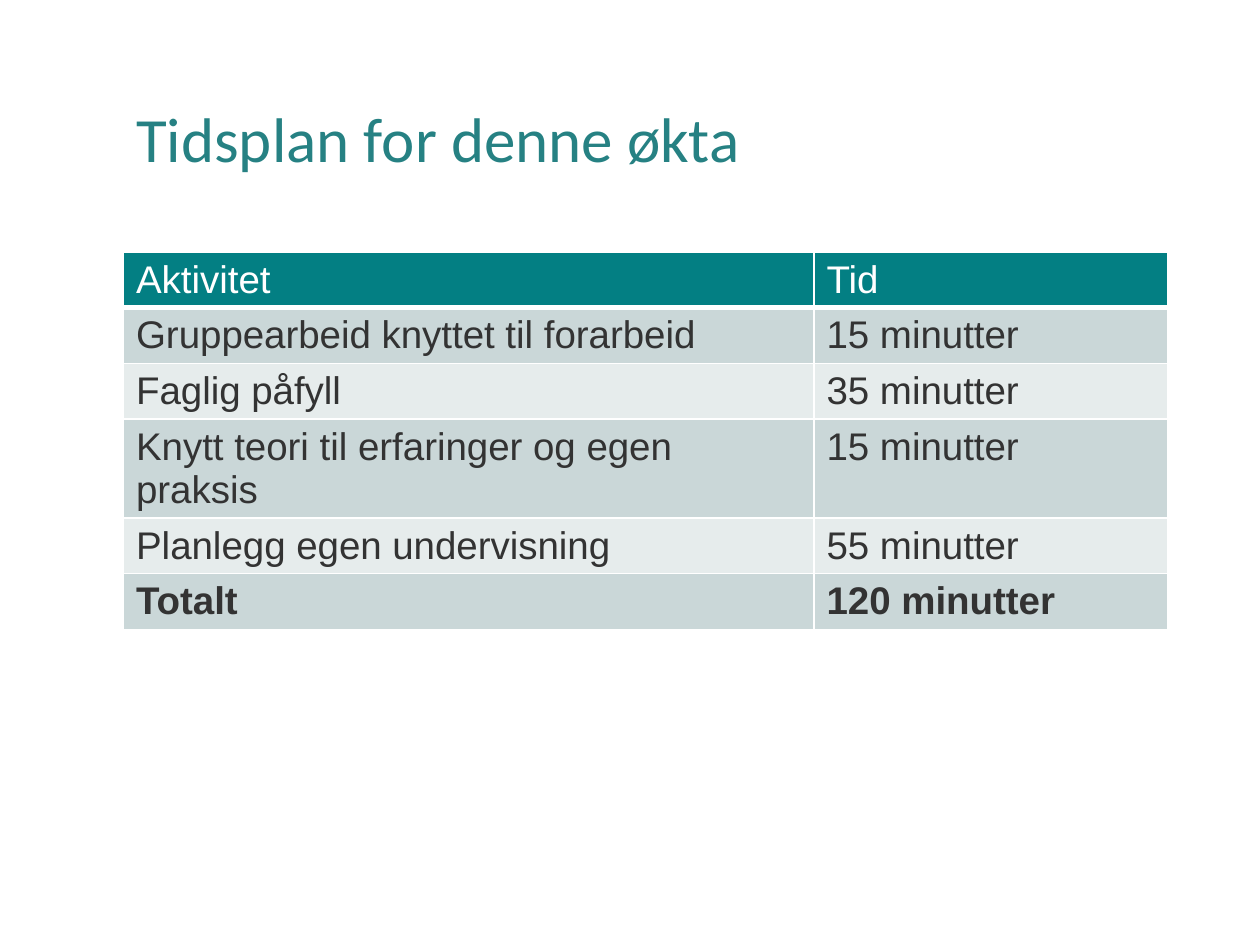
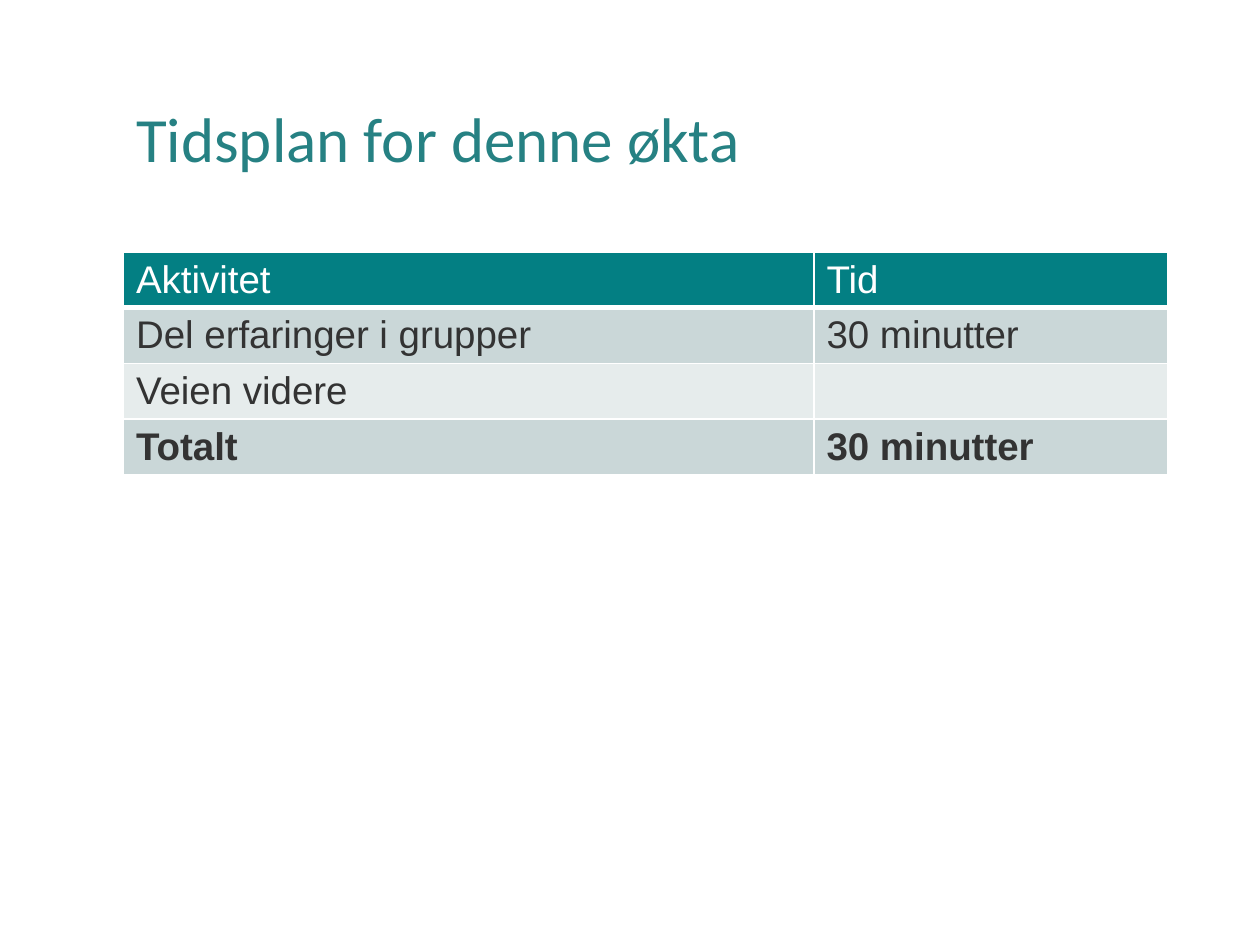
import lxml.etree
import pptx
import pptx.dml.color
import pptx.enum.text
import pptx.oxml.ns
import pptx.util

Cm = pptx.util.Cm
Pt = pptx.util.Pt

COLORS = {
    "title": "268183",
    "header": "037F83",
    "odd_row": "CAD7D8",
    "even_row": "E6ECEC",
    "text": "333333",
    "white": "FFFFFF",
}
LEFT, WIDTH = 2.49, 21.06
COLUMN_WIDTHS = (13.92, 7.14)
ROW_HEIGHT = 1.04
TITLE_ONLY = 5

TITLE = "Tidsplan for denne økta"
HEADER = ("Aktivitet", "Tid")
SCHEDULES = [
    [
        ("Gruppearbeid knyttet til forarbeid", "15 minutter"),
        ("Faglig påfyll", "35 minutter"),
        ("Knytt teori til erfaringer og egen praksis", "15 minutter"),
        ("Planlegg egen undervisning", "55 minutter"),
        ("Totalt", "120 minutter"),
    ],
    [
        ("Del erfaringer i grupper", "30 minutter"),
        ("Veien videre", ""),
        ("Totalt", "30 minutter"),
    ],
]


def rgb(name):
    return pptx.dml.color.RGBColor.from_string(COLORS[name])


def style_font(font, name, size, color, bold=False):
    font.name = name
    font.size = Pt(size)
    font.bold = bold
    font.color.rgb = rgb(color)


def add_title(page, text):
    title = page.shapes.title
    title.left, title.top = Cm(LEFT), Cm(1.02)
    title.width, title.height = Cm(WIDTH), Cm(3.68)
    frame = title.text_frame
    frame.text = text
    frame.auto_size = pptx.enum.text.MSO_AUTO_SIZE.NONE
    frame.vertical_anchor = pptx.enum.text.MSO_ANCHOR.MIDDLE
    para = frame.paragraphs[0]
    para.alignment = pptx.enum.text.PP_ALIGN.LEFT
    para.line_spacing = 0.9
    style_font(para.runs[0].font, "Calibri", 36, "title")


def set_borders(cell, top, bottom):
    """Draw white cell borders; top and bottom are widths in points."""
    qn = pptx.oxml.ns.qn
    properties = cell._tc.get_or_add_tcPr()
    sides = (("lnL", 1), ("lnR", 1), ("lnT", top), ("lnB", bottom))
    for position, (tag, width) in enumerate(sides):
        line = lxml.etree.Element(qn(f"a:{tag}"), w=str(Pt(width)))
        fill = lxml.etree.SubElement(line, qn("a:solidFill"))
        lxml.etree.SubElement(fill, qn("a:srgbClr"), val=COLORS["white"])
        properties.insert(position, line)


def fill_cell(cell, text, fill, color, bold):
    cell.fill.solid()
    cell.fill.fore_color.rgb = rgb(fill)
    cell.text_frame.text = text
    para = cell.text_frame.paragraphs[0]
    for font in [para.font] + [span.font for span in para.runs]:
        style_font(font, "Arial", 22, color, bold)


def add_schedule(page, activities):
    rows = [HEADER] + activities
    table = page.shapes.add_table(
        len(rows), len(HEADER), Cm(LEFT), Cm(5.08),
        Cm(WIDTH), Cm(ROW_HEIGHT * len(rows))).table
    for column, width in zip(table.columns, COLUMN_WIDTHS):
        column.width = Cm(width)
    for number, texts in enumerate(rows):
        table.rows[number].height = Cm(ROW_HEIGHT)
        is_header = number == 0
        is_total = number == len(rows) - 1
        band = "odd_row" if number % 2 else "even_row"
        for cell, text in zip(table.rows[number].cells, texts):
            fill_cell(cell, text, "header" if is_header else band,
                      "white" if is_header else "text", is_total)
            set_borders(cell, top=3 if number == 1 else 1,
                        bottom=3 if is_header else 1)


def main():
    deck = pptx.Presentation()
    deck.slide_width, deck.slide_height = Cm(25.4), Cm(19.05)
    for activities in SCHEDULES:
        page = deck.slides.add_slide(deck.slide_layouts[TITLE_ONLY])
        add_title(page, TITLE)
        add_schedule(page, activities)
    deck.save("out.pptx")


if __name__ == "__main__":
    main()
